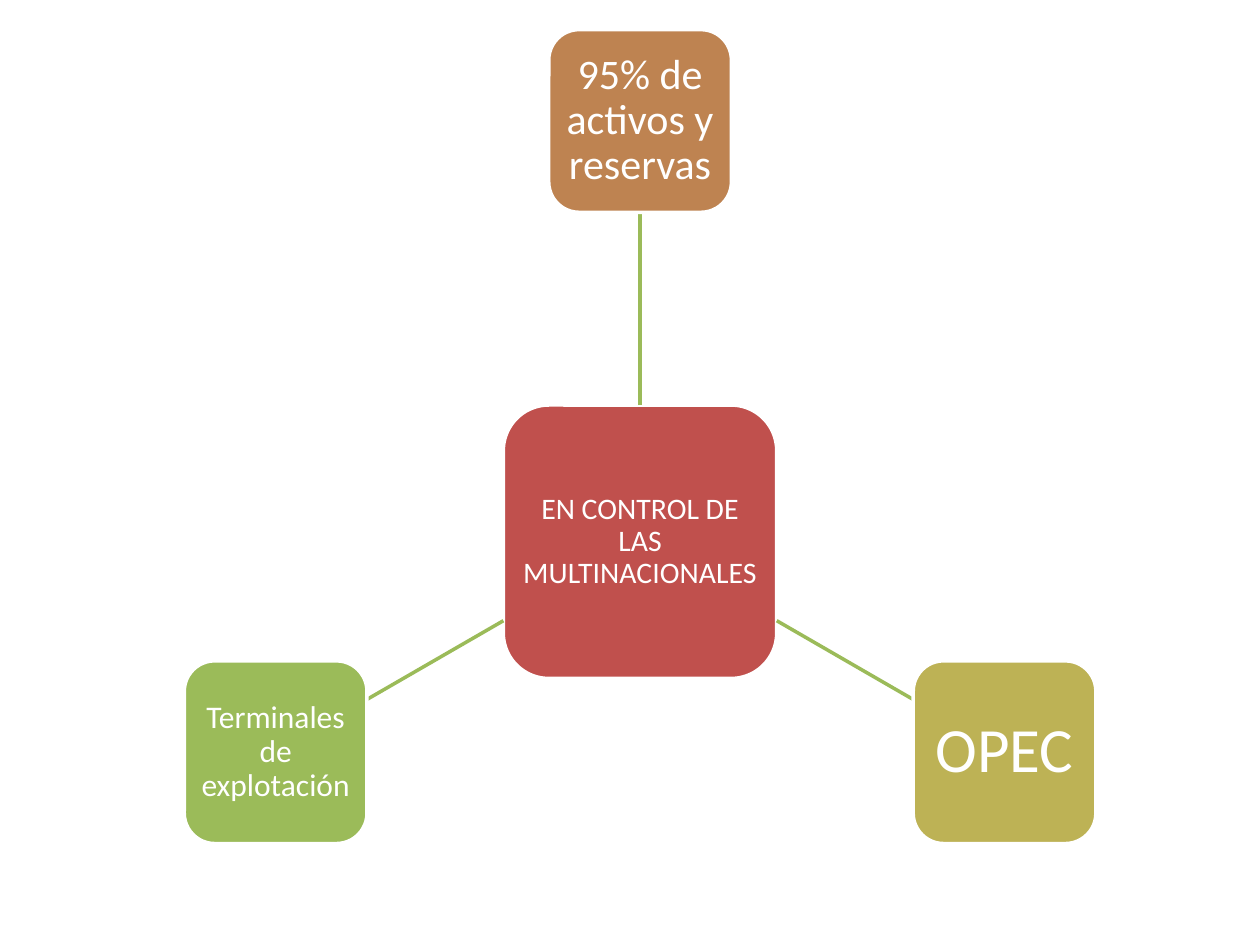
import math

import pptx
import pptx.dml.color
import pptx.enum.shapes
import pptx.enum.text
import pptx.util
from lxml import etree
from pptx.oxml.ns import qn
from pptx.util import Inches

COLORS = {
    "white": "FFFFFF",
    "red": "C0504D",
    "orange": "BE8351",
    "olive": "BDB255",
    "green": "9BBB59",
}
HUB_X, HUB_Y, HUB_SIZE = 5.08, 4.3, 2.17
NODE_SIZE, RADIUS = 1.45, 3.34

# Text, fill, font size, text inset and angle (clockwise from the right)
NODES = [
    ("95% de activos y reservas", "orange", 24, 0.07, -90),
    ("OPEC", "olive", 36, 0.1, 30),
    ("Terminales de explotación", "green", 18, 0.05, 150),
]


class RadialDiagram:
    font_name = "Calibri"
    line_width = pptx.util.Pt(2)

    def __init__(self, slide):
        self.slide = slide

    def color(self, name):
        return pptx.dml.color.RGBColor.from_string(COLORS[name])

    def box(self, text, fill, font_size, inset, center_x, center_y, size):
        shape = self.slide.shapes.add_shape(
            pptx.enum.shapes.MSO_SHAPE.ROUNDED_RECTANGLE,
            Inches(center_x - size / 2), Inches(center_y - size / 2),
            Inches(size), Inches(size))
        shape.shadow.inherit = False
        shape.fill.solid()
        shape.fill.fore_color.rgb = self.color(fill)
        shape.line.color.rgb = self.color("white")
        shape.line.width = self.line_width

        frame = shape.text_frame
        frame.word_wrap = True
        frame.vertical_anchor = pptx.enum.text.MSO_ANCHOR.MIDDLE
        frame.margin_left = frame.margin_right = Inches(inset)
        frame.margin_top = frame.margin_bottom = Inches(inset)
        frame.text = text
        paragraph = frame.paragraphs[0]
        paragraph.alignment = pptx.enum.text.PP_ALIGN.CENTER
        paragraph.line_spacing = 0.9
        paragraph.font.name = self.font_name
        paragraph.font.size = pptx.util.Pt(font_size)
        paragraph.font.color.rgb = self.color("white")

    def spoke(self, start_x, start_y, end_x, end_y):
        connector = self.slide.shapes.add_connector(
            pptx.enum.shapes.MSO_CONNECTOR.STRAIGHT,
            Inches(start_x), Inches(start_y), Inches(end_x), Inches(end_y))
        connector.line.color.rgb = self.color("green")
        connector.line.width = self.line_width
        etree.SubElement(connector._element.spPr, qn("a:effectLst"))


def main():
    presentation = pptx.Presentation()
    presentation.slide_width = Inches(10)
    presentation.slide_height = Inches(7.5)
    slide = presentation.slides.add_slide(presentation.slide_layouts[6])
    diagram = RadialDiagram(slide)

    # Central box
    diagram.box("EN CONTROL DE LAS MULTINACIONALES", "red", 17, 0.05,
                HUB_X, HUB_Y, HUB_SIZE)

    # Outer boxes, each joined to the centre from edge to edge
    for text, fill, font_size, inset, angle in NODES:
        cosine = math.cos(math.radians(angle))
        sine = math.sin(math.radians(angle))
        reach = max(abs(cosine), abs(sine))
        start = HUB_SIZE / 2 / reach
        end = RADIUS - NODE_SIZE / 2 / reach
        diagram.spoke(HUB_X + start * cosine, HUB_Y + start * sine,
                      HUB_X + end * cosine, HUB_Y + end * sine)
        diagram.box(text, fill, font_size, inset,
                    HUB_X + RADIUS * cosine, HUB_Y + RADIUS * sine, NODE_SIZE)

    presentation.save("out.pptx")


if __name__ == "__main__":
    main()
